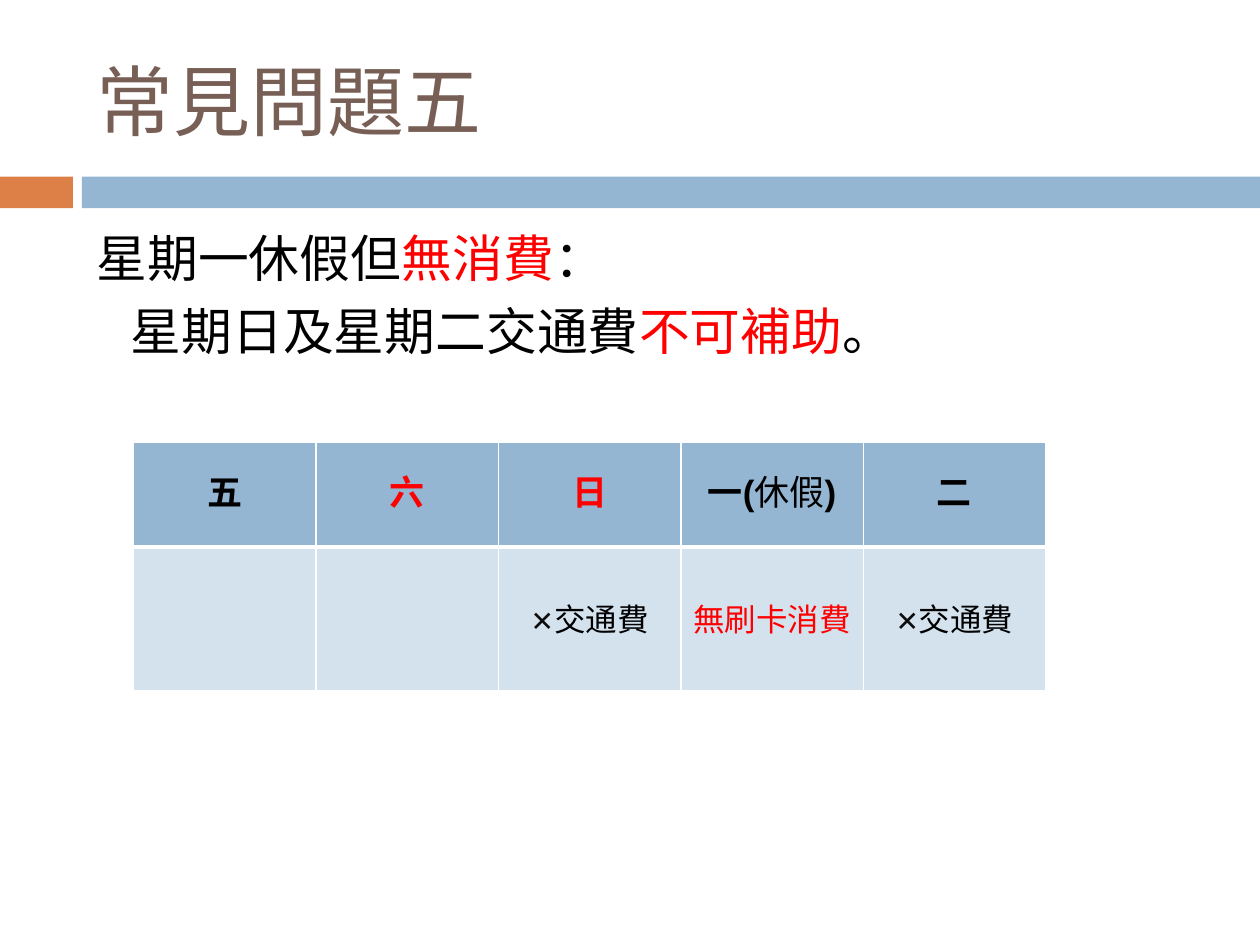
"""Build the slide on the fifth common question about travel subsidies."""
from lxml import etree
from pptx import Presentation
from pptx.dml.color import RGBColor
from pptx.enum.shapes import MSO_SHAPE
from pptx.enum.text import MSO_ANCHOR, PP_ALIGN
from pptx.oxml.ns import qn
from pptx.util import Cm, Pt

RECT = MSO_SHAPE.RECTANGLE
TOP, MID = MSO_ANCHOR.TOP, MSO_ANCHOR.MIDDLE
LEFT, MIDDLE = PP_ALIGN.LEFT, PP_ALIGN.CENTER

THEME = {
    "title": {"size": 44, "name": "Calibri", "bold": False, "color": "775F55"},
    "body": {"size": 29, "name": "Calibri", "bold": False, "color": "000000"},
    "head": {"size": 20, "name": "Arial", "bold": True, "color": "000000"},
    "cell": {"size": 18, "name": "Arial", "bold": False, "color": "000000"},
    "mark": {"size": 16, "name": "Calibri", "bold": True, "color": "0D0D0D"},
    "red": {"color": "FF0000"},
    "plain": {"bold": False},
    "orange": "DD8047", "blue": "94B6D2", "pale": "D4E2ED", "white": "FFFFFF",
}

TITLE = [("常見問題五", "")]
BODY = [
    (0, [("星期一休假但", ""), ("無消費", "red"), ("：", "")]),
    (0.69, [("星期日及星期二交通費", ""), ("不可補助", "red"), ("。", "")]),
]
FARE = [("✕", "mark"), ("交通費", "")]
DAYS = [
    [("五", "")], [("六", "red")], [("日", "red")],
    [("一(", ""), ("休假", "plain"), (")", "")], [("二", "")],
]
NOTES = [[], [], FARE, [("無刷卡消費", "red")], FARE]
ROWS = [
    {"cells": DAYS, "base": "head", "fill": "blue", "high": 2.11, "edges": (1, 3)},
    {"cells": NOTES, "base": "cell", "fill": "pale", "high": 2.9, "edges": (3, 1)},
]
BARS = [(0, 1.47, "orange"), (1.65, 23.75, "blue")]
WIDE, HIGH = 25.4, 19.05
EDGE, SPAN = 1.7, 22.66
GRID = (2.69, 8.92, 18.39)


def tint(key):
    return RGBColor.from_string(THEME[key])


def apply(item, values):
    for name, value in values.items():
        setattr(item, name, value)


def write(para, runs, base):
    for text, kind in runs:
        run = para.add_run()
        run.text = text
        look = {**THEME[base], **THEME.get(kind, {})}
        run.font.color.rgb = RGBColor.from_string(look.pop("color"))
        look["size"] = Pt(look["size"])
        apply(run.font, look)


def place(shape, left, top, width, height):
    apply(shape, {"left": Cm(left), "top": Cm(top),
                  "width": Cm(width), "height": Cm(height)})


def border(cell, upper, lower):
    props = cell._tc.get_or_add_tcPr()
    for side, width in zip("LRTB", (1, 1, upper, lower)):
        line = etree.SubElement(props, qn("a:ln" + side), w=str(Pt(width)))
        fill = etree.SubElement(line, qn("a:solidFill"))
        etree.SubElement(fill, qn("a:srgbClr"), val=THEME["white"])


def add_bars(slide):
    for left, width, color in BARS:
        bar = slide.shapes.add_shape(RECT, Cm(left), Cm(3.56), Cm(width), Cm(0.64))
        bar.shadow.inherit = False
        bar.fill.solid()
        bar.fill.fore_color.rgb = tint(color)
        bar.line.fill.background()


def add_title(slide):
    title = slide.shapes.title
    place(title, EDGE, 0.64, SPAN, 2.74)
    frame = title.text_frame
    apply(frame, {"vertical_anchor": MID, "word_wrap": True})
    para = frame.paragraphs[0]
    para.alignment = LEFT
    write(para, TITLE, "title")


def add_body(slide):
    box = slide.shapes.add_textbox(Cm(EDGE), Cm(4.45), Cm(SPAN), Cm(12.5))
    frame = box.text_frame
    apply(frame, {"vertical_anchor": TOP, "word_wrap": True})
    for num, (indent, runs) in enumerate(BODY):
        para = frame.add_paragraph() if num else frame.paragraphs[0]
        para.space_before = Pt(7)
        para._p.get_or_add_pPr().set("marL", str(Cm(indent)))
        write(para, runs, "body")


def add_grid(slide):
    left, top, width = GRID
    high = sum(row["high"] for row in ROWS)
    table = slide.shapes.add_table(
        len(ROWS), len(DAYS), Cm(left), Cm(top), Cm(width), Cm(high)).table
    for col in table.columns:
        col.width = Cm(width / len(DAYS))
    for line, row in zip(table.rows, ROWS):
        line.height = Cm(row["high"])
        for cell, runs in zip(line.cells, row["cells"]):
            apply(cell, {"vertical_anchor": MID, "margin_left": Cm(0.18),
                         "margin_right": Cm(0.18), "margin_top": 0,
                         "margin_bottom": 0})
            border(cell, *row["edges"])
            cell.fill.solid()
            cell.fill.fore_color.rgb = tint(row["fill"])
            para = cell.text_frame.paragraphs[0]
            apply(para, {"alignment": MIDDLE, "line_spacing": Pt(24)})
            write(para, runs, row["base"])


def main():
    deck = Presentation()
    apply(deck, {"slide_width": Cm(WIDE), "slide_height": Cm(HIGH)})
    slide = deck.slides.add_slide(deck.slide_layouts[5])
    for build in (add_bars, add_title, add_body, add_grid):
        build(slide)
    deck.save("out.pptx")


if __name__ == "__main__":
    main()
